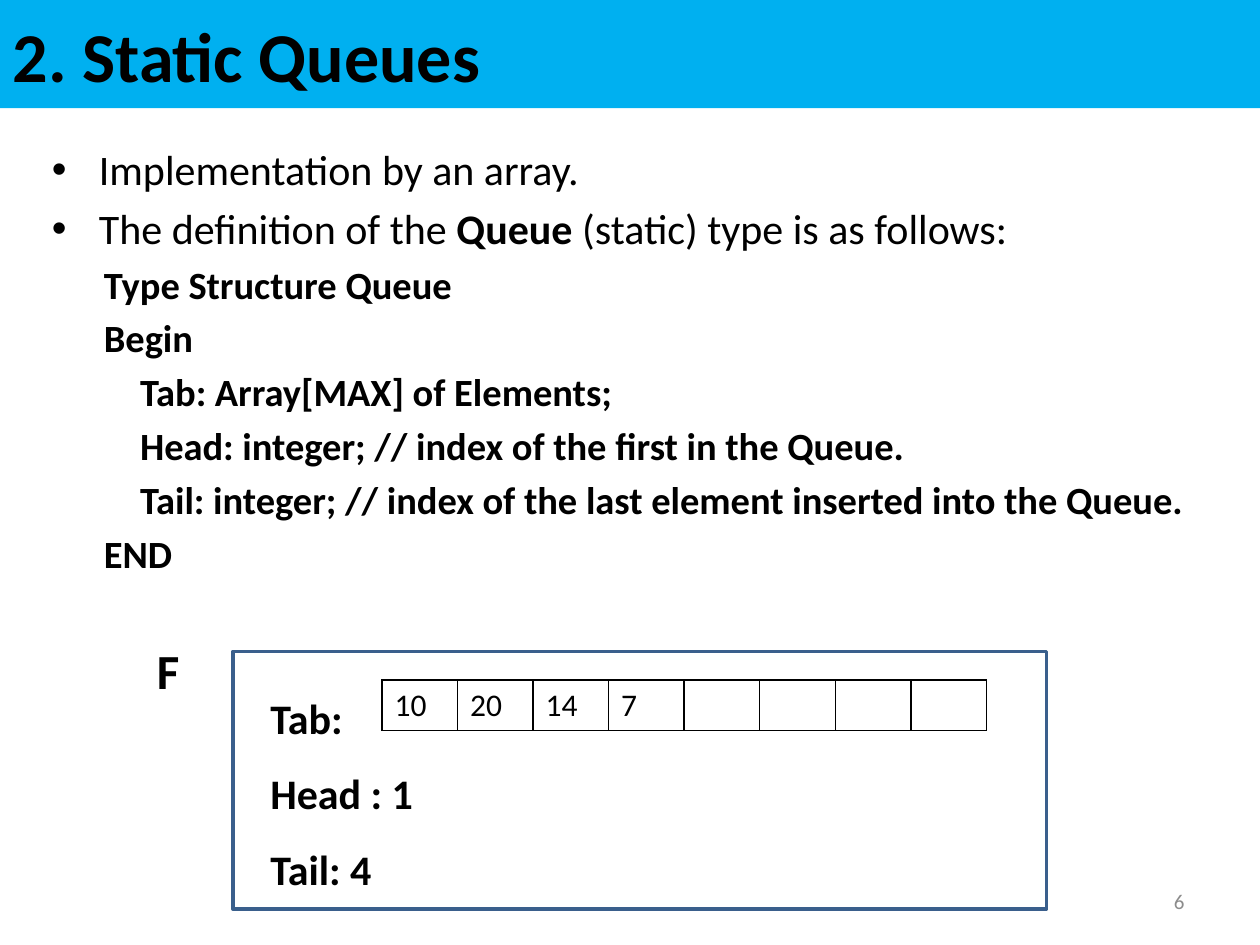
from dataclasses import dataclass
from lxml.etree import SubElement
from pptx import Presentation
from pptx.dml.color import RGBColor
from pptx.enum.shapes import MSO_SHAPE
from pptx.enum.text import MSO_ANCHOR, MSO_AUTO_SIZE, PP_ALIGN
from pptx.oxml.ns import qn
from pptx.util import Cm, Pt


@dataclass(frozen=True)
class Theme:
    font: str = "Calibri"
    banner: RGBColor = RGBColor(0x00, 0xB0, 0xF0)
    text: RGBColor = RGBColor(0x00, 0x00, 0x00)
    frame: RGBColor = RGBColor(0x3A, 0x5F, 0x8C)
    number: RGBColor = RGBColor(0x8C, 0x8C, 0x8C)
    title_size: int = 40
    body_size: int = 24
    code_size: int = 22
    name_size: int = 28
    cell_size: int = 18
    number_size: int = 12


THEME = Theme()


def apply_format(target, **values):
    for name, value in values.items():
        setattr(target, name, value)


def place(shape, box):
    names = ("left", "top", "width", "height")
    apply_format(shape, **{name: Cm(value) for name, value in zip(names, box)})


def add_run(paragraph, text, size, bold=False, color=THEME.text):
    run = paragraph.add_run()
    run.text = text
    apply_format(run.font, name=THEME.font, size=Pt(size), bold=bold)
    run.font.color.rgb = color


def set_indent(paragraph, margin, first_line=0.0):
    properties = paragraph._p.get_or_add_pPr()
    properties.set("marL", str(Cm(margin)))
    properties.set("indent", str(Cm(first_line)))
    return properties


def next_paragraph(frame, index):
    return frame.paragraphs[0] if index == 0 else frame.add_paragraph()


def fill_title(title, box):
    place(title, box)
    title.fill.solid()
    title.fill.fore_color.rgb = THEME.banner
    frame = title.text_frame
    apply_format(frame, vertical_anchor=MSO_ANCHOR.MIDDLE, auto_size=MSO_AUTO_SIZE.NONE)
    paragraph = frame.paragraphs[0]
    paragraph.alignment = PP_ALIGN.LEFT
    add_run(paragraph, "2. Static Queues", THEME.title_size, bold=True)


def fill_body(body, box):
    place(body, box)
    frame = body.text_frame
    apply_format(frame, word_wrap=True, auto_size=MSO_AUTO_SIZE.NONE)

    # Bulleted statements, as (text, bold) runs
    bullets = [
        [("Implementation by an array.", False)],
        [("The definition of the ", False), ("Queue ", True),
         ("(static) type is as follows:", False)],
    ]
    for index, runs in enumerate(bullets):
        paragraph = next_paragraph(frame, index)
        set_indent(paragraph, 0.95, -0.95)
        paragraph.space_before = Pt(0.2 * THEME.body_size if index else 0)
        for text, bold in runs:
            add_run(paragraph, text, THEME.body_size, bold)

    # Type definition and the name of the example queue
    outer, inner = 1.05, 1.78
    size, gap = THEME.code_size, 0.2 * THEME.code_size
    lines = [
        ("Type Structure Queue", outer, size, gap),
        ("Begin", outer, size, gap),
        ("Tab: Array[MAX] of Elements;", inner, size, gap),
        ("Head: integer; // index of the first in the Queue.", inner, size, gap),
        ("Tail: integer; // index of the last element inserted into the Queue.",
         inner, size, gap),
        ("END", outer, size, gap),
        ("F", 2.12, THEME.name_size, 37),
    ]
    for text, margin, text_size, space in lines:
        paragraph = frame.add_paragraph()
        SubElement(set_indent(paragraph, margin), qn("a:buNone"))
        paragraph.space_before = Pt(space)
        add_run(paragraph, text, text_size, bold=True)


def set_borders(cell):
    properties = cell._tc.get_or_add_tcPr()
    for position, side in enumerate(("lnL", "lnR", "lnT", "lnB")):
        line = properties.makeelement(qn(f"a:{side}"), {"w": str(Pt(1))})
        fill = SubElement(line, qn("a:solidFill"))
        SubElement(fill, qn("a:srgbClr"), val=str(THEME.text))
        properties.insert(position, line)


def add_array(slide, box, values, length):
    left, top, width, height = map(Cm, box)
    table = slide.shapes.add_table(1, length, left, top, width, height).table
    apply_format(table, first_row=False, horz_banding=False)
    for index, cell in enumerate(table.iter_cells()):
        cell.fill.background()
        set_borders(cell)
        paragraph = cell.text_frame.paragraphs[0]
        paragraph.font.size = Pt(THEME.cell_size)
        if index < len(values):
            add_run(paragraph, values[index], THEME.cell_size)


def add_queue(slide, box):
    left, top, width, height = box
    frame_shape = slide.shapes.add_shape(MSO_SHAPE.RECTANGLE, *map(Cm, box))
    frame_shape.shadow.inherit = False
    frame_shape.fill.background()
    frame_shape.line.color.rgb = THEME.frame
    frame_shape.line.width = Pt(2)
    frame = frame_shape.text_frame
    apply_format(frame, word_wrap=True, vertical_anchor=MSO_ANCHOR.MIDDLE)
    for index, text in enumerate(("Tab:", "Head : 1", "Tail: 4")):
        paragraph = next_paragraph(frame, index)
        set_indent(paragraph, 0.5)
        apply_format(paragraph, alignment=PP_ALIGN.LEFT, line_spacing=1.5)
        add_run(paragraph, text, THEME.body_size, bold=True)
    # Array contents beside the "Tab:" label
    add_array(slide, (left + 3.0, top + 0.58, 12.19, 1.02), ("10", "20", "14", "7"), 8)


def add_page_number(slide, box):
    frame = slide.shapes.add_textbox(*map(Cm, box)).text_frame
    apply_format(frame, word_wrap=True, vertical_anchor=MSO_ANCHOR.MIDDLE)
    paragraph = frame.paragraphs[0]
    paragraph.alignment = PP_ALIGN.RIGHT
    add_run(paragraph, "6", THEME.number_size, color=THEME.number)


def main():
    presentation = Presentation()
    apply_format(presentation, slide_width=Cm(25.4), slide_height=Cm(19.05))
    slide = presentation.slides.add_slide(presentation.slide_layouts[1])
    fill_title(slide.shapes.title, (0, 0, 25.4, 2.18))
    fill_body(slide.placeholders[1], (0.79, 2.77, 24.61, 15.09))
    add_page_number(slide, (18.2, 17.66, 5.93, 1.01))
    add_queue(slide, (4.7, 13.13, 16.4, 5.2))
    presentation.save("out.pptx")


if __name__ == "__main__":
    main()
